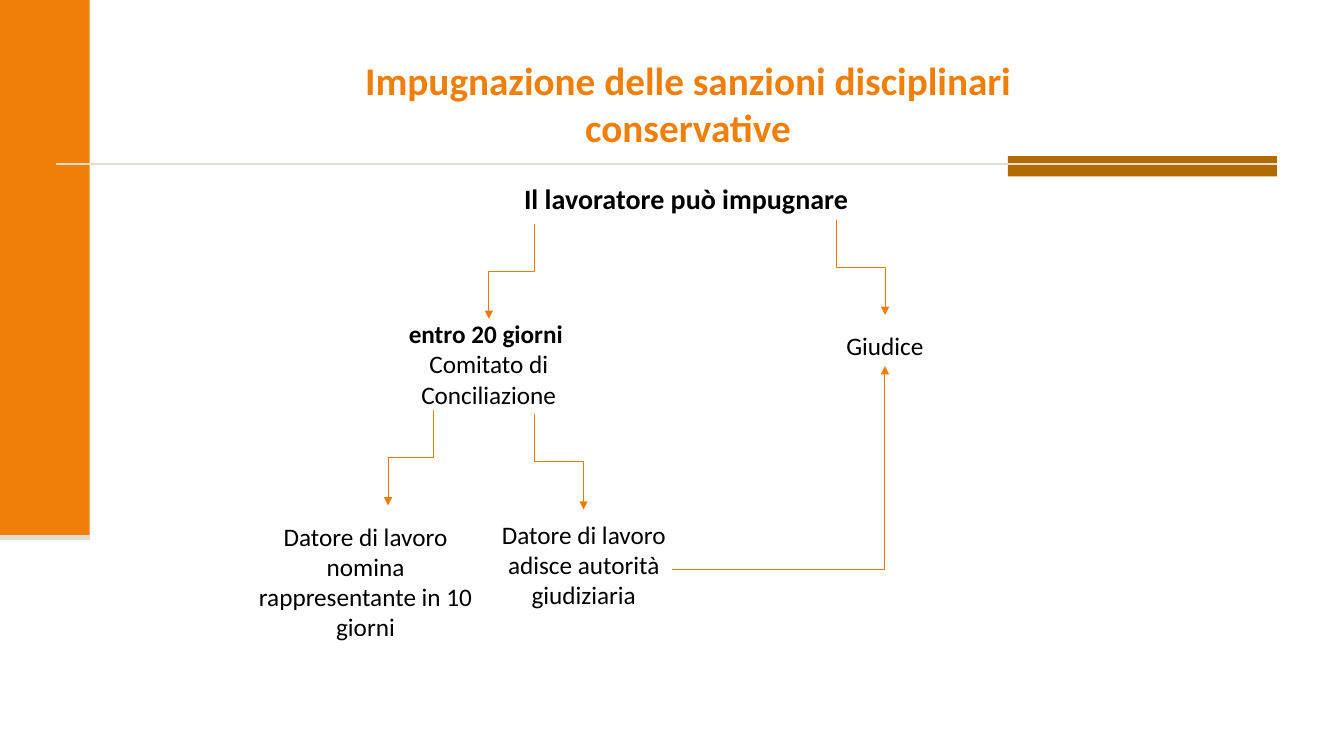
"""Build the slide on how conservative disciplinary sanctions are challenged."""
from lxml.etree import SubElement
from pptx import Presentation
from pptx.dml.color import RGBColor as RGB
from pptx.enum.shapes import MSO_CONNECTOR as LINK, MSO_SHAPE as SHAPE
from pptx.enum.text import PP_ALIGN as ALIGN
from pptx.oxml.ns import qn
from pptx.util import Inches, Pt

COLORS = {"sidebar": "F07F09", "accent": "B26B02", "rule": "E3DED1",
          "arrow": "F07C03", "title": "F07F09", "text": "000000"}

deck = Presentation()
deck.slide_width, deck.slide_height = Inches(13.33), Inches(7.5)
slide = deck.slides.add_slide(deck.slide_layouts[6])
column, row = deck.slide_width / 48, deck.slide_height / 27


def place(x, y):
    return [round(x * column), round(y * row)]


def connect(kind, start, end, color, weight, arrow=False):
    link = slide.shapes.add_connector(kind, *start, *end)
    link.line.color.rgb = RGB.from_string(COLORS[color])
    link.line.width = Pt(weight)
    properties = link._element.spPr
    if arrow:
        SubElement(properties.find(qn("a:ln")), qn("a:tailEnd"), type="triangle")
    SubElement(properties, qn("a:effectLst"))
    return link


for color, x, y, width, height in [("sidebar", 0, 0, 3.2, 19.2),
                                   ("accent", 36, 5.58, 9.6, 0.72)]:
    band = slide.shapes.add_shape(SHAPE.RECTANGLE, *place(x, y), *place(width, height))
    band.shadow.inherit = False
    band.fill.solid()
    band.fill.fore_color.rgb = RGB.from_string(COLORS[color])
    band.line.fill.background()

connect(LINK.STRAIGHT, place(2, 5.87), place(45.6, 5.87), "rule", 1.5)
connect(LINK.STRAIGHT, place(0, 19.2), place(3.2, 19.2), "rule", 3.5)

steps = [
    ("title", 9.25, 1.84, 30.64, 3.74, 28, ALIGN.CENTER,
     [("Impugnazione delle sanzioni disciplinari conservative", True)]),
    ("text", 18.36, 6.3, 38.9, 1.58, 20, ALIGN.LEFT,
     [("Il lavoratore può impugnare", True)]),
    ("text", 12.56, 11.2, 9.79, 3.74, 18, ALIGN.CENTER,
     [("entro 20 giorni ", True), ("Comitato di Conciliazione", False)]),
    ("text", 8.68, 18.43, 8.75, 4.72, 18, ALIGN.CENTER,
     [("Datore di lavoro nomina rappresentante in 10 giorni", False)]),
    ("text", 16.42, 18.36, 8.86, 3.64, 18, ALIGN.CENTER,
     [("Datore di lavoro adisce autorità giudiziaria", False)]),
    ("text", 26.71, 11.63, 9.79, 1.44, 18, ALIGN.CENTER,
     [("Giudice", False)]),
]
for color, x, y, width, height, size, align, lines in steps:
    step = slide.shapes.add_textbox(*place(x, y), *place(width, height))
    step.text_frame.word_wrap = True
    step.text_frame.text = "\n".join(wording for wording, bold in lines)
    for paragraph, (wording, bold) in zip(step.text_frame.paragraphs, lines):
        paragraph.alignment = align
        font = paragraph.runs[0].font
        font.name, font.size, font.bold = "Calibri", Pt(size), bold
        font.color.rgb = RGB.from_string(COLORS[color])
judge = step

drop = 3.4 * row
for x, y, shift in [(29.88, 7.85, 1.73), (19.08, 14.8, 1.76),
                    (15.48, 14.65, -1.62), (19.08, 7.99, -1.62)]:
    middle_x, middle_y = (x + shift / 2) * column, y * row + drop / 2
    reach = drop / 2 if shift > 0 else -drop / 2
    rise = abs(shift) * column / 2
    start = [round(middle_x + reach), round(middle_y - rise)]
    end = [round(middle_x - reach), round(middle_y + rise)]
    branch = connect(LINK.ELBOW, start, end, "arrow", 0.75, arrow=True)
    turn = 270 if shift > 0 else 90
    branch._element.spPr.find(qn("a:xfrm")).set("rot", str(turn * 60000))

corner = [judge.left + judge.width // 2, round(20.34 * row)]
connect(LINK.STRAIGHT, place(24.01, 20.34), corner, "arrow", 0.75)
appeal = connect(LINK.STRAIGHT, corner, place(31.61, 13.07), "arrow", 0.75, arrow=True)
appeal.end_connect(judge, 2)

deck.save("out.pptx")
